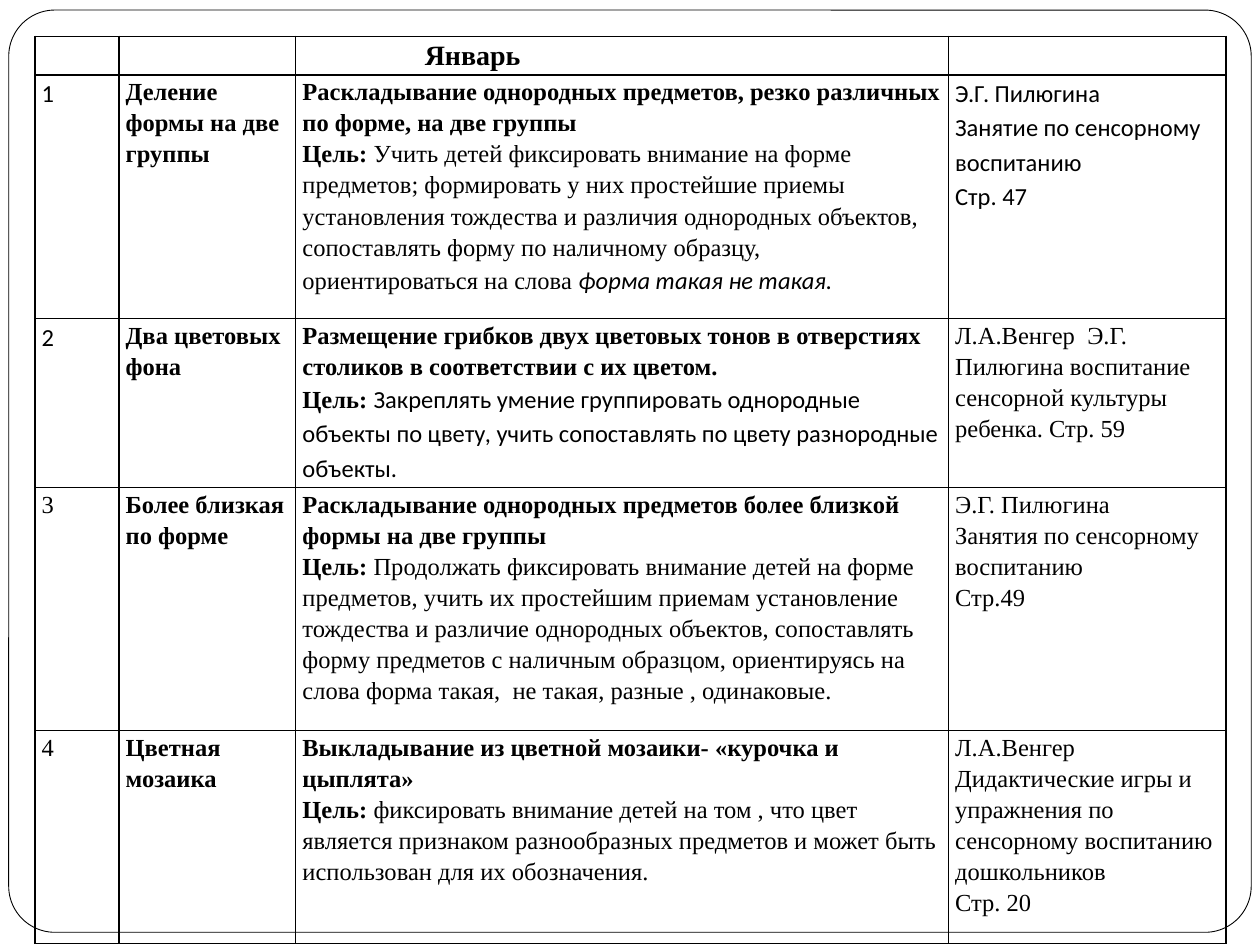
from dataclasses import dataclass

from lxml.etree import SubElement
from pptx import Presentation
from pptx.dml.color import RGBColor
from pptx.enum.shapes import MSO_SHAPE
from pptx.oxml.ns import qn
from pptx.util import Pt


@dataclass(frozen=True)
class Theme:
    ink: str = "000000"
    paper: str = "FFFFFF"
    serif: str = "Times New Roman"
    sans: str = "Calibri"
    body: float = 14
    head: float = 16
    space: float = 1.15
    inset: float = 3.8
    rule: float = 1


class Page:
    """Holds the theme and the current slide."""

    def __init__(self, deck, theme):
        self.theme = theme
        self.slide = deck.slides.add_slide(deck.slide_layouts[6])

    def frame(self, left, top, width, height, round_by):
        box = self.slide.shapes.add_shape(
            MSO_SHAPE.ROUNDED_RECTANGLE, Pt(left), Pt(top), Pt(width), Pt(height))
        box.adjustments[0] = round_by
        box.shadow.inherit = False
        box.fill.solid()
        box.fill.fore_color.rgb = RGBColor.from_string(self.theme.paper)
        box.line.color.rgb = RGBColor.from_string(self.theme.ink)
        box.line.width = Pt(0.5)

    def table(self, left, top, widths, heights, rows):
        grid = self.slide.shapes.add_table(
            len(heights), len(widths), Pt(left), Pt(top),
            Pt(sum(widths)), Pt(sum(heights))).table
        grid.first_row = grid.horz_banding = False
        for col, width in zip(grid.columns, widths):
            col.width = Pt(width)
        for row, height, texts in zip(grid.rows, heights, rows):
            row.height = Pt(height)
            for cell, lines in zip(row.cells, texts):
                self.cell(cell, lines)
        return grid

    def cell(self, cell, lines):
        cell.margin_left = cell.margin_right = Pt(self.theme.inset)
        cell.margin_top = cell.margin_bottom = 0
        self.border(cell)
        cell.fill.background()
        body = cell.text_frame
        for i, line in enumerate(lines):
            par = body.add_paragraph() if i else body.paragraphs[0]
            self.text(par, line)

    def text(self, par, line):
        """Each run is (text, marks): b bold, i italic, c sans font, h head size."""
        par.line_spacing = self.theme.space
        for words, marks in line:
            run = par.add_run()
            run.text = words
            font = run.font
            font.name = self.theme.sans if "c" in marks else self.theme.serif
            font.size = Pt(self.theme.head if "h" in marks else self.theme.body)
            font.bold = "b" in marks
            font.italic = "i" in marks
            font.color.rgb = RGBColor.from_string(self.theme.ink)

    def border(self, cell):
        props = cell._tc.get_or_add_tcPr()
        for side in ("a:lnL", "a:lnR", "a:lnT", "a:lnB"):
            line = SubElement(props, qn(side), w=str(Pt(self.theme.rule)))
            fill = SubElement(line, qn("a:solidFill"))
            SubElement(fill, qn("a:srgbClr"), val=self.theme.ink)

    def indent(self, par, left):
        par._p.get_or_add_pPr().set("marL", str(Pt(left)))


def one(words, marks=""):
    return [(words, marks)]


def goal(*runs):
    return [("Цель: ", "b"), *runs]


ROWS = [
    # Month
    [[], [], [one("Январь", "bh")], []],
    # Lesson 1
    [[one("1", "c")],
     [one("Деление формы на две группы", "b")],
     [one("Раскладывание однородных предметов, резко различных по форме, "
          "на две группы", "b"),
      goal(("Учить детей фиксировать внимание на форме предметов; формировать "
            "у них простейшие приемы установления тождества и различия "
            "однородных объектов, сопоставлять форму по наличному образцу, "
            "ориентироваться на слова ", ""),
           ("форма такая не такая.", "ci"))],
     [one("Э.Г. Пилюгина", "c"),
      one("Занятие по сенсорному воспитанию", "c"),
      one("Стр. 47", "c")]],
    # Lesson 2
    [[one("2", "c")],
     [one("Два цветовых фона", "b")],
     [one("Размещение грибков двух цветовых тонов в отверстиях столиков "
          "в соответствии с их цветом.", "b"),
      goal(("Закреплять умение группировать однородные объекты по цвету, учить "
            "сопоставлять по цвету разнородные объекты.", "c"))],
     [one("Л.А.Венгер  Э.Г. Пилюгина воспитание сенсорной культуры ребенка. "
          "Стр. 59")]],
    # Lesson 3
    [[one("3")],
     [one("Более близкая по форме", "b")],
     [one("Раскладывание однородных предметов более близкой формы "
          "на две группы", "b"),
      goal(("Продолжать фиксировать внимание детей на форме предметов, учить "
            "их простейшим приемам установление тождества и различие "
            "однородных объектов, сопоставлять форму предметов с наличным "
            "образцом, ориентируясь на слова форма такая,  не такая, "
            "разные , одинаковые.", ""))],
     [one("Э.Г. Пилюгина"),
      one("Занятия по сенсорному воспитанию"),
      one("Стр.49")]],
    # Lesson 4
    [[one("4")],
     [one("Цветная мозаика", "b")],
     [one("Выкладывание из цветной мозаики- «курочка и цыплята»", "b"),
      goal(("фиксировать внимание детей на том , что цвет является признаком "
            "разнообразных предметов и может быть использован для их "
            "обозначения.", ""))],
     [one("Л.А.Венгер  Дидактические игры и упражнения по сенсорному "
          "воспитанию дошкольников"),
      one("Стр. 20")]],
]


def main():
    deck = Presentation()
    deck.slide_width, deck.slide_height = Pt(720), Pt(540)
    page = Page(deck, Theme())

    # Rounded frame behind the plan
    page.frame(5, 5.75, 710, 527, 0.05)

    # Lesson plan
    plan = page.table(20, 20.75, [48, 101, 373, 158.5],
                      [21.75, 139.25, 96.5, 139, 121.75], ROWS)
    month = plan.cell(0, 2).text_frame.paragraphs[0]
    page.indent(month, 70)

    deck.save("out.pptx")


if __name__ == "__main__":
    main()
